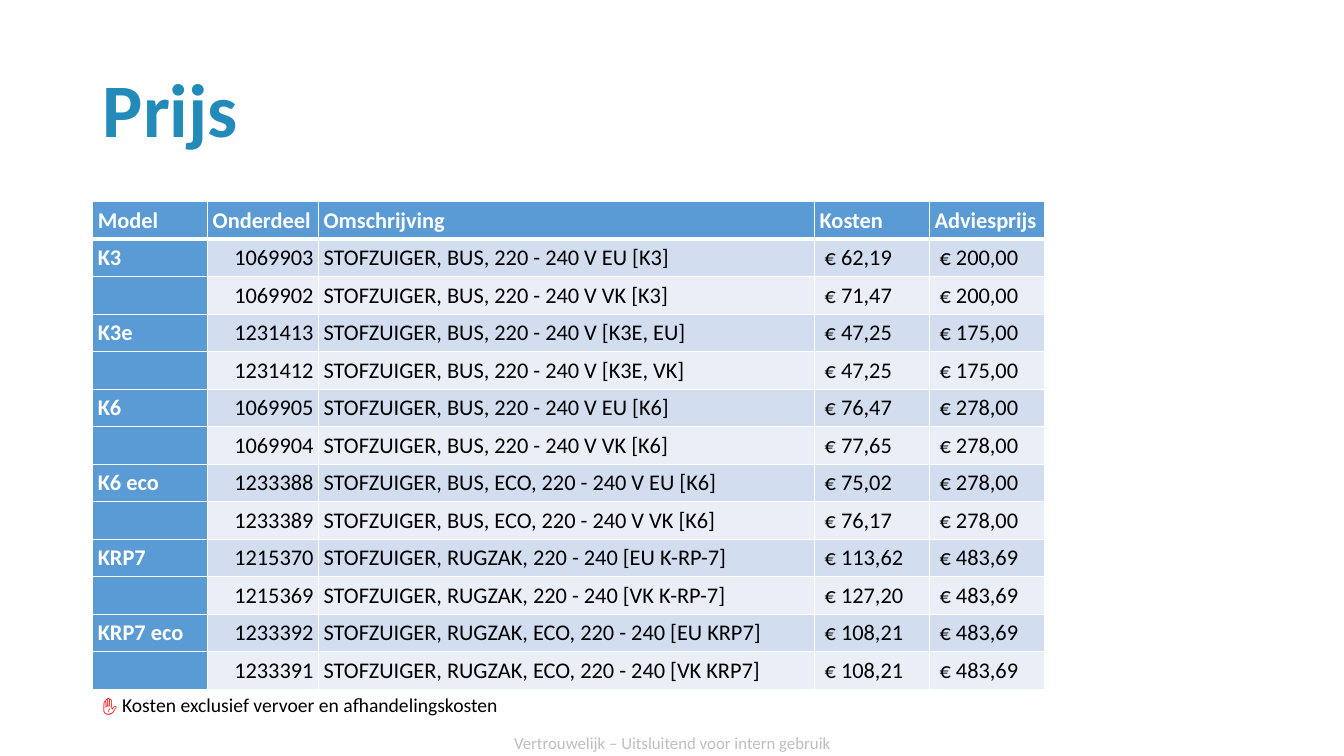
from lxml.etree import SubElement
from pptx import Presentation
from pptx.dml.color import RGBColor
from pptx.enum.text import MSO_ANCHOR, PP_ALIGN
from pptx.oxml.ns import qn
from pptx.util import Inches, Pt

WHITE, BLACK, BLUE = "FFFFFF", "000000", "5B9BD5"
BANDS = ["D2DEEF", "EAEFF7"]
LEFT = 0.92
COLS = [1.14, 1.1, 4.92, 1.14, 1.14]
HIGH = 0.37
HEAD = ["Model", "Onderdeel", "Omschrijving", "Kosten", "Adviesprijs"]
ROWS = [
    ["K3", "1069903", "STOFZUIGER, BUS, 220 - 240 V EU [K3]", "€ 62,19", "€ 200,00"],
    ["", "1069902", "STOFZUIGER, BUS, 220 - 240 V VK [K3]", "€ 71,47", "€ 200,00"],
    ["K3e", "1231413", "STOFZUIGER, BUS, 220 - 240 V [K3E, EU]", "€ 47,25", "€ 175,00"],
    ["", "1231412", "STOFZUIGER, BUS, 220 - 240 V [K3E, VK]", "€ 47,25", "€ 175,00"],
    ["K6", "1069905", "STOFZUIGER, BUS, 220 - 240 V EU [K6]", "€ 76,47", "€ 278,00"],
    ["", "1069904", "STOFZUIGER, BUS, 220 - 240 V VK [K6]", "€ 77,65", "€ 278,00"],
    ["K6 eco", "1233388", "STOFZUIGER, BUS, ECO, 220 - 240 V EU [K6]", "€ 75,02", "€ 278,00"],
    ["", "1233389", "STOFZUIGER, BUS, ECO, 220 - 240 V VK [K6]", "€ 76,17", "€ 278,00"],
    ["KRP7", "1215370", "STOFZUIGER, RUGZAK, 220 - 240 [EU K-RP-7]", "€ 113,62", "€ 483,69"],
    ["", "1215369", "STOFZUIGER, RUGZAK, 220 - 240 [VK K-RP-7]", "€ 127,20", "€ 483,69"],
    ["KRP7 eco", "1233392", "STOFZUIGER, RUGZAK, ECO, 220 - 240 [EU KRP7]", "€ 108,21", "€ 483,69"],
    ["", "1233391", "STOFZUIGER, RUGZAK, ECO, 220 - 240 [VK KRP7]", "€ 108,21", "€ 483,69"],
]


def paint(fill, color):
    fill.solid()
    fill.fore_color.rgb = RGBColor.from_string(color)


def write(para, text, size, color, bold=False):
    run = para.add_run()
    run.text = text
    run.font.name, run.font.size, run.font.bold = "Calibri", Pt(size), bold
    paint(run.font.fill, color)


deck = Presentation()
deck.slide_width, deck.slide_height = Inches(13.33), Inches(7.5)
slide = deck.slides.add_slide(deck.slide_layouts[5])

title = slide.shapes.title
title.left, title.top = Inches(LEFT), Inches(0.4)
title.width, title.height = Inches(11.5), Inches(1.45)
title.text_frame.vertical_anchor = MSO_ANCHOR.MIDDLE
para = title.text_frame.paragraphs[0]
para.alignment, para.line_spacing = PP_ALIGN.LEFT, 0.9
write(para, "Prijs", 54, "228BBA", True)

# Price table: blue header row and model column, banded body
grid = [HEAD] + ROWS
table = slide.shapes.add_table(
    len(grid), len(COLS), Inches(LEFT), Inches(2),
    Inches(sum(COLS)), Inches(HIGH * len(grid))).table
for col, wide in zip(table.columns, COLS):
    col.width = Inches(wide)

for r, line in enumerate(grid):
    table.rows[r].height = Inches(HIGH)
    for c, text in enumerate(line):
        cell = table.cell(r, c)
        strong = r == 0 or c == 0
        price = r > 0 and c > 2
        cell.vertical_anchor = MSO_ANCHOR.BOTTOM
        cell.margin_left = Inches(0.1 if price else 0.05)
        cell.margin_right = cell.margin_top = cell.margin_bottom = Inches(0.05)
        para = cell.text_frame.paragraphs[0]
        if r > 0 and c == 1:
            para.alignment = PP_ALIGN.RIGHT
        if text:
            write(para, text, 16, WHITE if strong else BLACK, strong)
        else:
            SubElement(para._p, qn("a:endParaRPr"), sz="1600")
        for side in "LRTB":
            thick = (r, side) in [(0, "B"), (1, "T")]
            edge = SubElement(cell._tc.get_or_add_tcPr(), qn(f"a:ln{side}"),
                              w=str(Pt(3 if thick else 1)))
            SubElement(SubElement(edge, qn("a:solidFill")), qn("a:srgbClr"), val=WHITE)
        paint(cell.fill, BLUE if strong else BANDS[(r - 1) % 2])

# Cost note and confidentiality line
NOTES = [
    (LEFT, 6.82, 4.66, 0.34, 14, PP_ALIGN.LEFT,
     [("✋ ", "FF0000"), ("Kosten exclusief vervoer en afhandelingskosten", BLACK)]),
    (4.42, 7.26, 4.5, 0.21, 12, PP_ALIGN.CENTER,
     [("Vertrouwelijk – Uitsluitend voor intern gebruik", "BFBFBF")]),
]
for x, y, wide, high, size, align, runs in NOTES:
    frame = slide.shapes.add_textbox(
        Inches(x), Inches(y), Inches(wide), Inches(high)).text_frame
    frame.word_wrap = True
    frame.vertical_anchor = MSO_ANCHOR.MIDDLE
    frame.paragraphs[0].alignment = align
    for text, color in runs:
        write(frame.paragraphs[0], text, size, color)

deck.save("out.pptx")
